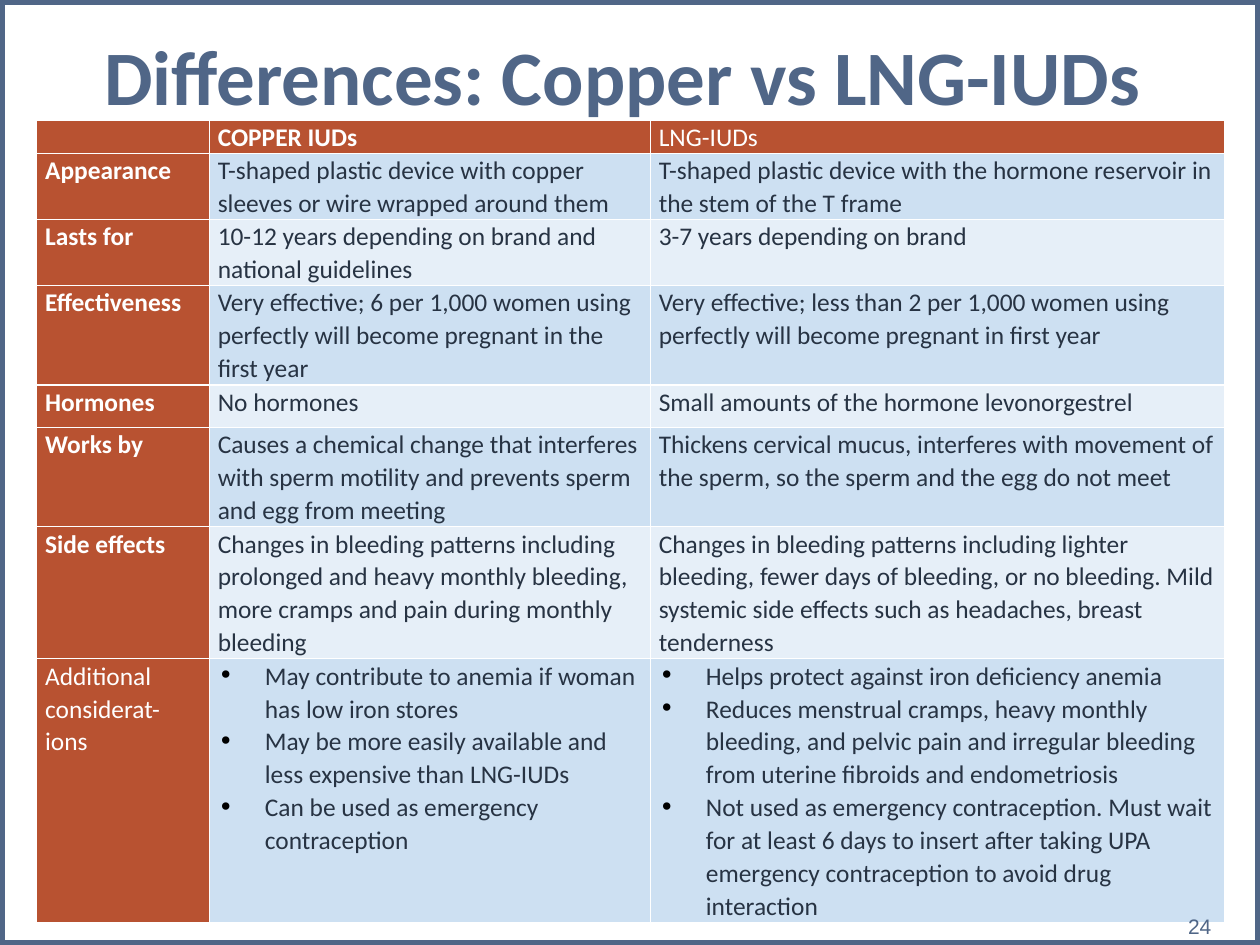
import pptx
import pptx.util
import pptx.dml.color
import pptx.enum.text
import pptx.enum.shapes
import pptx.oxml
import pptx.oxml.ns

Cm = pptx.util.Cm
Pt = pptx.util.Pt
RGB = pptx.dml.color.RGBColor
ALIGN = pptx.enum.text.PP_ALIGN
MIDDLE = pptx.enum.text.MSO_ANCHOR.MIDDLE

SLATE = RGB(0x50, 0x66, 0x87)
RUST = RGB(0xB8, 0x52, 0x31)
INK = RGB(0x27, 0x33, 0x43)
WHITE = RGB(0xFF, 0xFF, 0xFF)
BANDS = [RGB(0xE6, 0xEF, 0xF8), RGB(0xCD, 0xE0, 0xF2)]

WIDTHS = [3.48, 8.89, 11.58]
ROWS = [
    (0.64, "", "COPPER IUDs", "LNG-IUDs"),
    (1.33, "Appearance",
     "T-shaped plastic device with copper sleeves or wire wrapped around them",
     "T-shaped plastic device with the hormone reservoir in the stem of the T frame"),
    (1.33, "Lasts for",
     "10-12 years depending on brand and national guidelines",
     "3-7 years depending on brand"),
    (2, "Effectiveness",
     "Very effective; 6 per 1,000 women using perfectly will become pregnant in the first year",
     "Very effective; less than 2 per 1,000 women using perfectly will become pregnant in first year"),
    (0.86, "Hormones", "No hormones", "Small amounts of the hormone levonorgestrel"),
    (2, "Works by",
     "Causes a chemical change that interferes with sperm motility and prevents sperm and egg from meeting",
     "Thickens cervical mucus, interferes with movement of the sperm, so the sperm and the egg do not meet"),
    (2.65, "Side effects",
     "Changes in bleeding patterns including prolonged and heavy monthly bleeding, "
     "more cramps and pain during monthly bleeding",
     "Changes in bleeding patterns including lighter bleeding, fewer days of bleeding, or no bleeding. "
     "Mild systemic side effects such as headaches, breast tenderness"),
    (5.32, "Additional considerat-ions",
     "May contribute to anemia if woman has low iron stores\n"
     "May be more easily available and less expensive than LNG-IUDs\n"
     "Can be used as emergency contraception",
     "Helps protect against iron deficiency anemia\n"
     "Reduces menstrual cramps, heavy monthly bleeding, and pelvic pain and irregular bleeding "
     "from uterine fibroids and endometriosis\n"
     "Not used as emergency contraception. Must wait for at least 6 days to insert after taking "
     "UPA emergency contraception to avoid drug interaction"),
]
PLAIN = ["LNG-IUDs", "Additional considerat-ions"]


def style(para, face, size, color, bold=False):
    for run in para.runs:
        run.font.name = face
        run.font.size = Pt(size)
        run.font.bold = bold
        run.font.color.rgb = color


def bullet(para):
    props = para._p.get_or_add_pPr()
    props.set("marL", str(Cm(0.95)))
    props.set("indent", str(-Cm(0.95)))
    space = pptx.oxml.ns.nsdecls("a")
    props.append(pptx.oxml.parse_xml(f'<a:buClr {space}><a:srgbClr val="000000"/></a:buClr>'))
    props.append(pptx.oxml.parse_xml(f'<a:buChar {space} char="∙"/>'))


deck = pptx.Presentation()
deck.slide_width = Cm(25.4)
deck.slide_height = Cm(19.05)
slide = deck.slides.add_slide(deck.slide_layouts[5])

title = slide.shapes.title
title.left, title.top, title.width, title.height = Cm(0), Cm(0.68), Cm(25.12), Cm(1.65)
title.text_frame.text = "Differences: Copper vs LNG-IUDs"
title.text_frame.vertical_anchor = MIDDLE
title.text_frame.paragraphs[0].alignment = ALIGN.CENTER
style(title.text_frame.paragraphs[0], "Calibri", 44, SLATE, True)

high = sum(row[0] for row in ROWS)
table = slide.shapes.add_table(
    len(ROWS), len(WIDTHS), Cm(0.74), Cm(2.43), Cm(sum(WIDTHS)), Cm(high)).table
for col, width in zip(table.columns, WIDTHS):
    col.width = Cm(width)
for r, (height, *texts) in enumerate(ROWS):
    table.rows[r].height = Cm(height)
    for c, text in enumerate(texts):
        head = r == 0 or c == 0
        cell = table.cell(r, c)
        cell.margin_left = cell.margin_right = Cm(0.17)
        cell.margin_top = cell.margin_bottom = Cm(0)
        cell.fill.solid()
        cell.fill.fore_color.rgb = RUST if head else BANDS[r % 2]
        cell.text_frame.text = text
        for para in cell.text_frame.paragraphs:
            para.line_spacing = 1.07
            if "\n" in text:
                bullet(para)
            para.font.size = Pt(14.5)
            style(para, "Calibri", 14.5, WHITE if head else INK, head and text not in PLAIN)

page = slide.shapes.add_textbox(Cm(18.75), Cm(18.16), Cm(5.92), Cm(1.02))
page.text_frame.word_wrap = True
page.text_frame.vertical_anchor = MIDDLE
page.text_frame.text = "24"
page.text_frame.paragraphs[0].alignment = ALIGN.RIGHT
style(page.text_frame.paragraphs[0], "Arial", 12, SLATE)

frame = slide.shapes.add_shape(
    pptx.enum.shapes.MSO_SHAPE.RECTANGLE, Cm(0), Cm(0), deck.slide_width, deck.slide_height)
frame.shadow.inherit = False
frame.fill.background()
frame.line.color.rgb = SLATE
frame.line.width = Pt(5.25)

deck.save("out.pptx")
